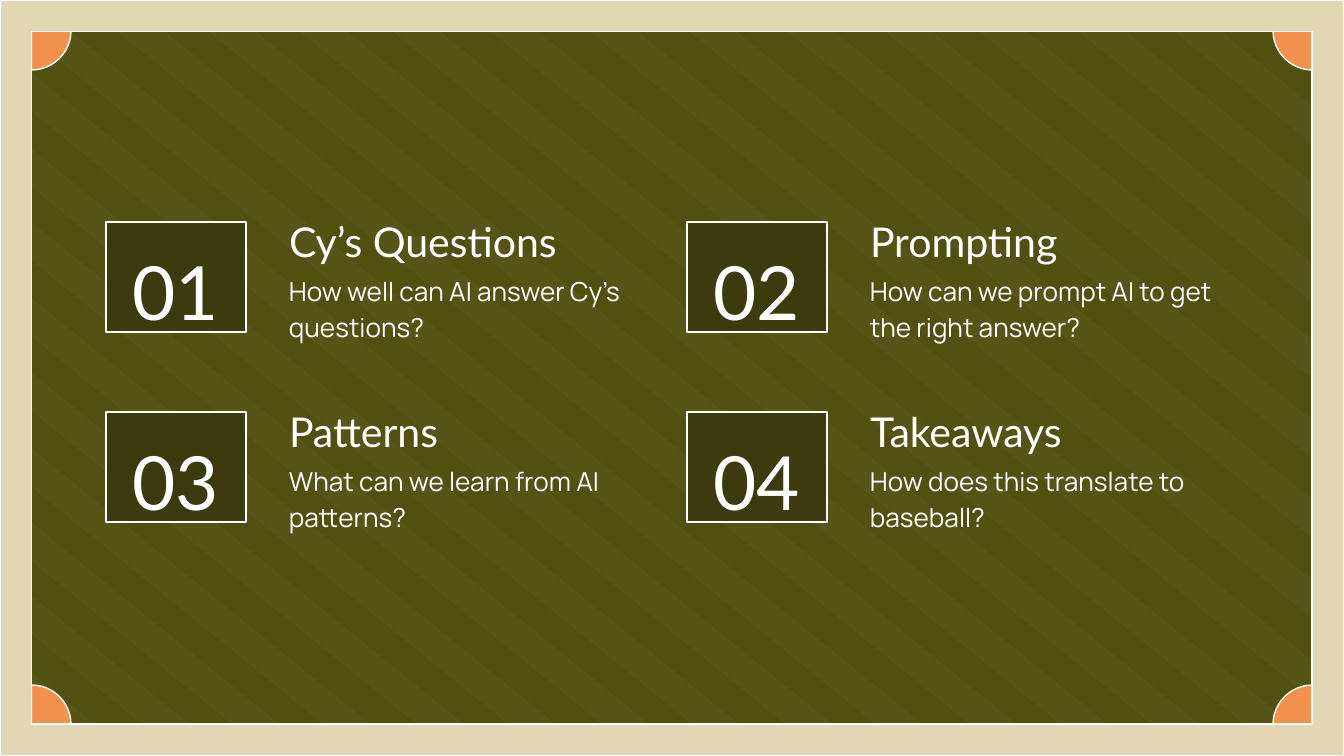
"""Build a four-part agenda slide on a striped green background."""
import dataclasses

import lxml.etree
import pptx
import pptx.dml.color
import pptx.enum.shapes
import pptx.enum.text
import pptx.oxml.ns
import pptx.util

PX = 914400 / 134.4
SHAPE = pptx.enum.shapes.MSO_SHAPE
ANCHOR = pptx.enum.text.MSO_ANCHOR
ALIGN = pptx.enum.text.PP_ALIGN
color = pptx.dml.color.RGBColor.from_string
qn = pptx.oxml.ns.qn


@dataclasses.dataclass(frozen=True)
class Theme:
    green: str = "505011"
    badge: str = "3B3B0E"
    orange: str = "F1914B"
    sand: str = "E3D6B5"
    white: str = "FFFFFF"
    heading_font: str = "Lato"
    body_font: str = "Manrope"
    number_size: int = 40
    heading_size: int = 22
    body_size: int = 14
    line_width: float = 0.75


theme = Theme()


def paint(shape, fill, outlined=True):
    shape.fill.solid()
    shape.fill.fore_color.rgb = color(fill)
    shape.shadow.inherit = False
    if outlined:
        shape.line.color.rgb = color(theme.white)
        shape.line.width = pptx.util.Pt(theme.line_width)
    else:
        shape.line.fill.background()


def write(box, text, font, size, anchor, align=ALIGN.LEFT, bottom=13):
    frame = box.text_frame
    frame.text = text
    frame.word_wrap = True
    frame.auto_size = pptx.enum.text.MSO_AUTO_SIZE.NONE
    frame.vertical_anchor = anchor
    frame.margin_left = frame.margin_right = frame.margin_top = round(13 * PX)
    frame.margin_bottom = round(bottom * PX)
    para = frame.paragraphs[0]
    para.alignment = align
    para.line_spacing = 1.15
    para.space_before = pptx.util.Pt(0)
    para.font.name = font
    para.font.size = pptx.util.Pt(size)
    para.font.bold = False
    para.font.color.rgb = color(theme.white)
    properties = para._p.get_or_add_pPr()
    properties.set("marL", "0")
    properties.set("indent", "0")
    bullet = lxml.etree.Element(qn("a:buNone"))
    properties.find(qn("a:defRPr")).addprevious(bullet)


deck = pptx.Presentation()
deck.slide_width = round(1344 * PX)
deck.slide_height = round(756 * PX)
page = deck.slides.add_slide(deck.slide_layouts.get_by_name("Comparison"))
page.background.fill.solid()
page.background.fill.fore_color.rgb = color(theme.green)
headings = [page.placeholders[index] for index in (1, 2, 3, 4)]
first_badge = page.shapes.title
for holder in list(page.placeholders):
    if holder.placeholder_format.idx >= 10:
        holder.element.getparent().remove(holder.element)

stripes = [
    (1258, 20, 83), (1148, 62, 211), (1036, 99, 335), (926, 140, 458),
    (817, 179, 583), (708, 220, 706), (590, 257, 837), (482, 298, 956),
    (370, 339, 1082), (263, 363, 1159), (169, 360, 1154), (75, 364, 1169),
    (-13, 364, 1163), (-97, 366, 1148), (-103, 395, 1051), (-95, 433, 942),
    (-79, 470, 821), (-67, 508, 703), (-50, 546, 579), (-40, 585, 468),
    (-30, 620, 352), (-13, 659, 234), (-4, 694, 113),
]
for left, top, width in stripes:
    area = [round(n * PX) for n in (left, top, width, 30)]
    stripe = page.shapes.add_shape(SHAPE.RECTANGLE, *area)
    stripe.rotation = 39.1
    paint(stripe, theme.white, outlined=False)
    tint = stripe.element.spPr.find(qn("a:solidFill"))[0]
    lxml.etree.SubElement(tint, qn("a:alpha"), val="3000")

corners = [(-8, -9), (1273, -9), (1273, 685), (-8, 685)]
for turn, (left, top) in enumerate(corners):
    area = [round(n * PX) for n in (left, top, 79, 79)]
    corner = page.shapes.add_shape(SHAPE.PIE, *area)
    corner.adjustments[0] = 0
    corner.adjustments[1] = 54
    corner.rotation = 90 * turn
    paint(corner, theme.orange)

border = page.shapes.add_shape(SHAPE.FRAME, 0, 0, deck.slide_width, deck.slide_height)
border.adjustments[0] = 0.042
paint(border, theme.sand)

topics = [
    ("Cy’s Questions", "How well can AI answer Cy’s questions?"),
    ("Prompting", "How can we prompt AI to get the right answer?"),
    ("Patterns", "What can we learn from AI patterns?"),
    ("Takeaways", "How does this translate to baseball?"),
]
for index, (name, question) in enumerate(topics):
    row, column = divmod(index, 2)
    x, y = 581 * column, 190 * row

    area = [round(n * PX) for n in (276 + x, 258 + y, 383, 89)]
    body = page.shapes.add_textbox(*area)
    write(body, question, theme.body_font, theme.body_size, ANCHOR.TOP)

    area = [round(n * PX) for n in (106 + x, 222 + y, 140, 110)]
    if index == 0:
        badge = first_badge
        badge.left, badge.top, badge.width, badge.height = area
        badge.element.getparent().append(badge.element)
    else:
        badge = page.shapes.add_shape(SHAPE.RECTANGLE, *area)
    paint(badge, theme.badge)
    write(badge, f"{index + 1:02}", theme.heading_font, theme.number_size,
          ANCHOR.MIDDLE, ALIGN.CENTER, bottom=0)

    heading = headings[index]
    area = [round(n * PX) for n in (276 + x, 198 + y, 383, 81)]
    heading.left, heading.top, heading.width, heading.height = area
    heading.element.getparent().append(heading.element)
    write(heading, name, theme.heading_font, theme.heading_size, ANCHOR.BOTTOM)

deck.save("out.pptx")
